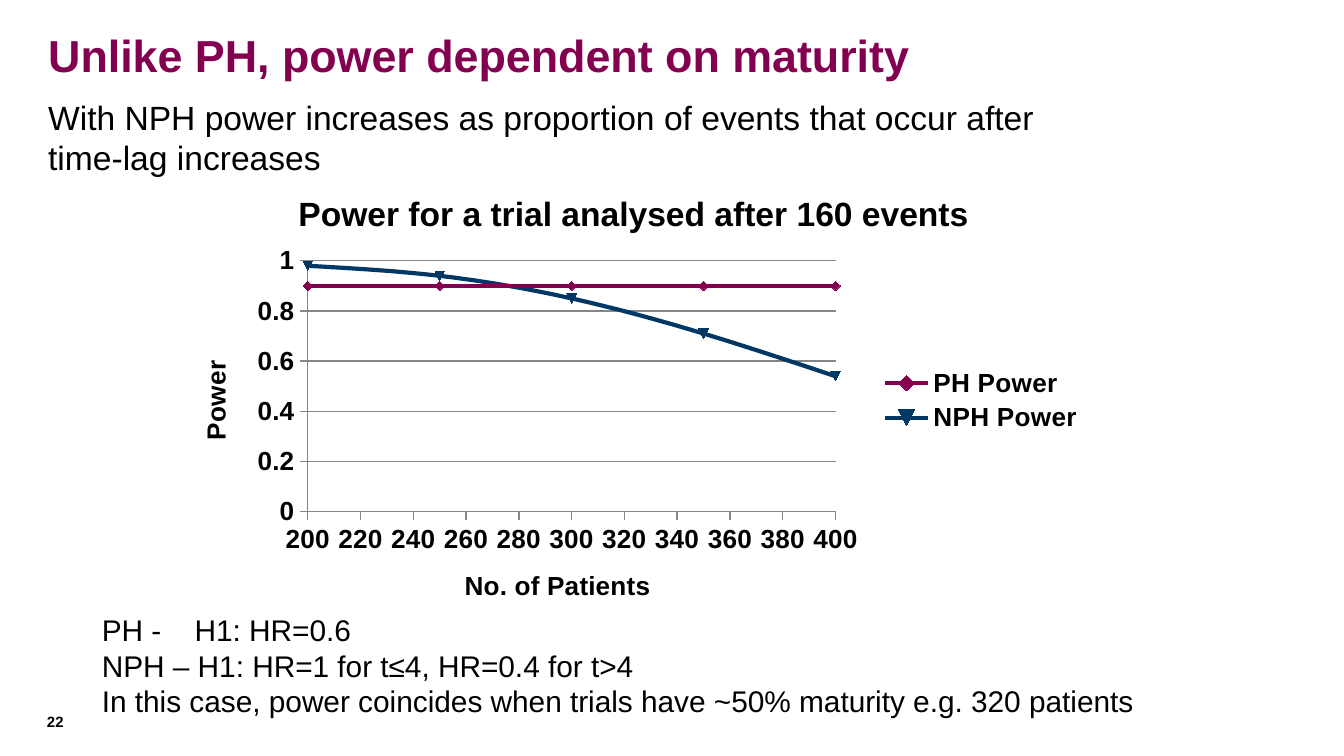
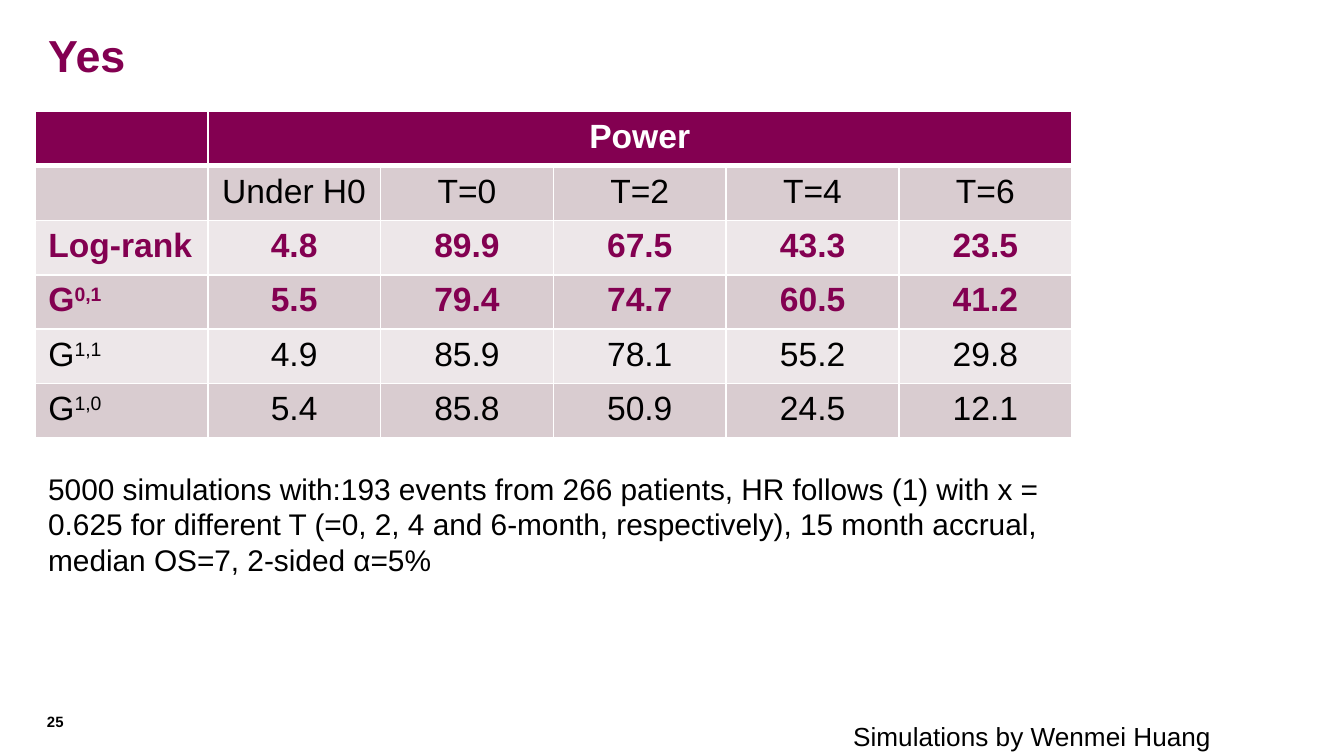
from dataclasses import dataclass
from typing import Optional

from lxml import etree
from pptx import Presentation
from pptx.chart.data import XyChartData
from pptx.dml.color import RGBColor
from pptx.enum.chart import XL_CHART_TYPE, XL_LEGEND_POSITION, XL_MARKER_STYLE, XL_TICK_MARK
from pptx.enum.text import MSO_ANCHOR, PP_ALIGN
from pptx.oxml import parse_xml
from pptx.oxml.ns import nsdecls, qn
from pptx.util import Emu, Pt

PX = 4572
SLIDE_WIDTH, SLIDE_HEIGHT = 2000, 1125
FONT = "Arial"

PLUM = RGBColor(0x83, 0x00, 0x51)
NAVY = RGBColor(0x00, 0x38, 0x65)
BLACK = RGBColor(0x00, 0x00, 0x00)
WHITE = RGBColor(0xFF, 0xFF, 0xFF)
GREY = RGBColor(0x86, 0x86, 0x86)
BAND_DARK = RGBColor(0xD9, 0xCC, 0xD0)
BAND_LIGHT = RGBColor(0xED, 0xE7, 0xE9)

LEFT, CENTER = PP_ALIGN.LEFT, PP_ALIGN.CENTER
TOP = MSO_ANCHOR.TOP
SCATTER = XL_CHART_TYPE.XY_SCATTER_SMOOTH
LEGEND_RIGHT = XL_LEGEND_POSITION.RIGHT
DIAMOND = XL_MARKER_STYLE.DIAMOND
TICK_OUTSIDE = XL_TICK_MARK.OUTSIDE


@dataclass(frozen=True)
class Box:
    left: int
    top: int
    width: int
    height: int

    def emu(self):
        return [Emu(length * PX) for length in (self.left, self.top, self.width, self.height)]


@dataclass(frozen=True)
class TextStyle:
    size: int
    color: RGBColor = BLACK
    bold: bool = False
    inset: bool = True
    wrap: bool = True
    tab: int = 0


@dataclass(frozen=True)
class PowerSeries:
    name: str
    values: tuple
    color: RGBColor
    marker: Optional[XL_MARKER_STYLE] = None


TITLE = TextStyle(24, PLUM, True)
LEAD = TextStyle(18)
NOTE = TextStyle(16)
HYPOTHESES = TextStyle(16, tab=138)
PAGE_NUMBER = TextStyle(8, bold=True, inset=False)
CREDIT = TextStyle(14, wrap=False)

TITLE_BOX = Box(52, 32, 1918, 110)
PAGE_BOX = Box(70, 1061, 86, 36)

PATIENTS = (200, 250, 300, 350, 400)
POWER_SERIES = (
    PowerSeries("PH Power", (0.9, 0.9, 0.9, 0.9, 0.9), PLUM, DIAMOND),
    PowerSeries("NPH Power", (0.98, 0.94, 0.85, 0.71, 0.54), NAVY),
)
PLOT_AREA = {"x": 0.148, "y": 0.198, "w": 0.57, "h": 0.543}

POWER_ROWS = (
    ("", "Power", "", "", "", ""),
    ("", "Under H0", "T=0", "T=2", "T=4", "T=6"),
    ("Log-rank", "4.8", "89.9", "67.5", "43.3", "23.5"),
    ("G^0,1", "5.5", "79.4", "74.7", "60.5", "41.2"),
    ("G^1,1", "4.9", "85.9", "78.1", "55.2", "29.8"),
    ("G^1,0", "5.4", "85.8", "50.9", "24.5", "12.1"),
)
HIGHLIGHTED_ROWS = (2, 3)


def style_font(font, size: int, color: RGBColor = BLACK, bold: bool = False) -> None:
    font.name = FONT
    font.size = Pt(size)
    font.bold = bold
    font.color.rgb = color


def add_text(slide, box: Box, style: TextStyle, *lines: str) -> None:
    frame = slide.shapes.add_textbox(*box.emu()).text_frame
    frame.word_wrap = style.wrap
    frame.vertical_anchor = TOP
    if not style.inset:
        frame.margin_left = frame.margin_right = frame.margin_top = frame.margin_bottom = 0
    for index, line in enumerate(lines):
        paragraph = frame.add_paragraph() if index else frame.paragraphs[0]
        if style.tab:
            tabs = etree.SubElement(paragraph._p.get_or_add_pPr(), qn("a:tabLst"))
            etree.SubElement(tabs, qn("a:tab"), pos=str(style.tab * PX), algn="l")
        run = paragraph.add_run()
        run.text = line
        style_font(run.font, style.size, style.color, style.bold)


def add_slide(presentation, title: str, page: int):
    slide = presentation.slides.add_slide(presentation.slide_layouts[6])
    add_text(slide, TITLE_BOX, TITLE, title)
    add_text(slide, PAGE_BOX, PAGE_NUMBER, str(page))
    return slide


def set_heading(owner, text: str, size: int) -> None:
    run = owner.text_frame.paragraphs[0].add_run()
    run.text = text
    style_font(run.font, size, bold=True)


def style_axis(axis, title: str, low: float, high: float, step: float) -> None:
    axis.minimum_scale, axis.maximum_scale, axis.major_unit = low, high, step
    axis.major_tick_mark = TICK_OUTSIDE
    axis.format.line.color.rgb = GREY
    axis.tick_labels.number_format = "General"
    axis.tick_labels.number_format_is_linked = False
    style_font(axis.tick_labels.font, 14, bold=True)
    set_heading(axis.axis_title, title, 14)


def style_series(series, item: PowerSeries) -> None:
    series._element.get_or_add_smooth().val = True
    series.format.line.color.rgb = item.color
    series.format.line.width = Pt(2.25)
    marker = series.marker
    if item.marker is not None:
        marker.style = item.marker
    marker.size = 5
    marker.format.fill.solid()
    marker.format.fill.fore_color.rgb = item.color
    marker.format.line.color.rgb = item.color


def fix_plot_area(chart) -> None:
    sizes = "".join(f'<c:{key} val="{value}"/>' for key, value in PLOT_AREA.items())
    layout = parse_xml(
        f'<c:layout {nsdecls("c")}><c:manualLayout><c:layoutTarget val="inner"/>'
        f'<c:xMode val="edge"/><c:yMode val="edge"/>{sizes}</c:manualLayout></c:layout>'
    )
    plot_area = chart._chartSpace.chart.plotArea
    for previous in plot_area.findall(qn("c:layout")):
        plot_area.remove(previous)
    plot_area.insert(0, layout)


def add_power_chart(slide, box: Box) -> None:
    data = XyChartData()
    for item in POWER_SERIES:
        points = data.add_series(item.name)
        for patients, power in zip(PATIENTS, item.values):
            points.add_data_point(patients, power)
    chart = slide.shapes.add_chart(SCATTER, *box.emu(), data).chart
    style_font(chart.font, 10)
    chart.has_title = True
    set_heading(chart.chart_title, "Power for a trial analysed after 160 events", 18)
    chart.has_legend = True
    chart.legend.position = LEGEND_RIGHT
    chart.legend.include_in_layout = False
    style_font(chart.legend.font, 14, bold=True)
    style_axis(chart.category_axis, "No. of Patients", 200, 400, 20)
    style_axis(chart.value_axis, "Power", 0, 1, 0.2)
    chart.category_axis.has_major_gridlines = False
    chart.value_axis.has_major_gridlines = True
    chart.value_axis.major_gridlines.format.line.color.rgb = GREY
    plot = chart.plots[0]
    plot.vary_by_categories = False
    for series, item in zip(plot.series, POWER_SERIES):
        style_series(series, item)
    fix_plot_area(chart)


def style_cell(cell, fill: RGBColor, top: int, bottom: int) -> None:
    properties = cell._tc.get_or_add_tcPr()
    for side, width in (("L", 1), ("R", 1), ("T", top), ("B", bottom)):
        line = etree.SubElement(properties, qn(f"a:ln{side}"), w=str(Pt(width)))
        solid = etree.SubElement(line, qn("a:solidFill"))
        etree.SubElement(solid, qn("a:srgbClr"), val=str(WHITE))
    cell.fill.solid()
    cell.fill.fore_color.rgb = fill


def write_cell(cell, text: str, align: PP_ALIGN, color: RGBColor, bold: bool) -> None:
    paragraph = cell.text_frame.paragraphs[0]
    paragraph.alignment = align
    for index, part in enumerate(text.split("^")):
        run = paragraph.add_run()
        run.text = part
        style_font(run.font, 18, color, bold)
        if index:
            run._r.get_or_add_rPr().set("baseline", "30000")


def add_power_table(slide, box: Box) -> None:
    row_count, column_count = len(POWER_ROWS), len(POWER_ROWS[0])
    table = slide.shapes.add_table(row_count, column_count, *box.emu()).table
    table.horz_banding = False
    for column in table.columns:
        column.width = Emu(box.width * PX // column_count)
    for row in table.rows:
        row.height = Emu(box.height * PX // row_count)
    table.cell(0, 1).merge(table.cell(0, column_count - 1))
    for row_index, texts in enumerate(POWER_ROWS):
        header = row_index == 0
        highlighted = row_index in HIGHLIGHTED_ROWS
        fill = PLUM if header else BAND_DARK if row_index % 2 else BAND_LIGHT
        color = WHITE if header else PLUM if highlighted else BLACK
        for column_index, text in enumerate(texts):
            cell = table.cell(row_index, column_index)
            style_cell(cell, fill, 3 if row_index == 1 else 1, 3 if header else 1)
            if text:
                align = CENTER if column_index else LEFT
                write_cell(cell, text, align, color, header or highlighted)


def build_maturity_slide(presentation) -> None:
    slide = add_slide(presentation, "Unlike PH, power dependent on maturity", 22)
    add_text(
        slide, Box(52, 134, 1544, 184), LEAD,
        "With NPH power increases as proportion of events that occur after time-lag increases",
    )
    add_text(
        slide, Box(132, 900, 1688, 316), HYPOTHESES,
        "PH -\tH1: HR=0.6",
        "NPH – H1: HR=1 for t≤4, HR=0.4 for t>4",
        "In this case, power coincides when trials have ~50% maturity e.g. 320 patients",
    )
    add_power_chart(slide, Box(254, 252, 1378, 688))


def build_simulation_slide(presentation) -> None:
    slide = add_slide(presentation, "Yes", 25)
    add_text(
        slide, Box(52, 690, 1544, 354), NOTE,
        "5000 simulations with:193 events from 266 patients, HR follows (1) with x = 0.625 "
        "for different T (=0, 2, 4 and 6-month, respectively), 15 month accrual, "
        "median OS=7, 2-sided α=5%",
    )
    add_power_table(slide, Box(52, 166, 1543, 486))
    add_text(slide, Box(1250, 1062, 576, 68), CREDIT, "Simulations by Wenmei Huang")


def main() -> None:
    presentation = Presentation()
    presentation.slide_width = Emu(SLIDE_WIDTH * PX)
    presentation.slide_height = Emu(SLIDE_HEIGHT * PX)
    build_maturity_slide(presentation)
    build_simulation_slide(presentation)
    presentation.save("out.pptx")


if __name__ == "__main__":
    main()
